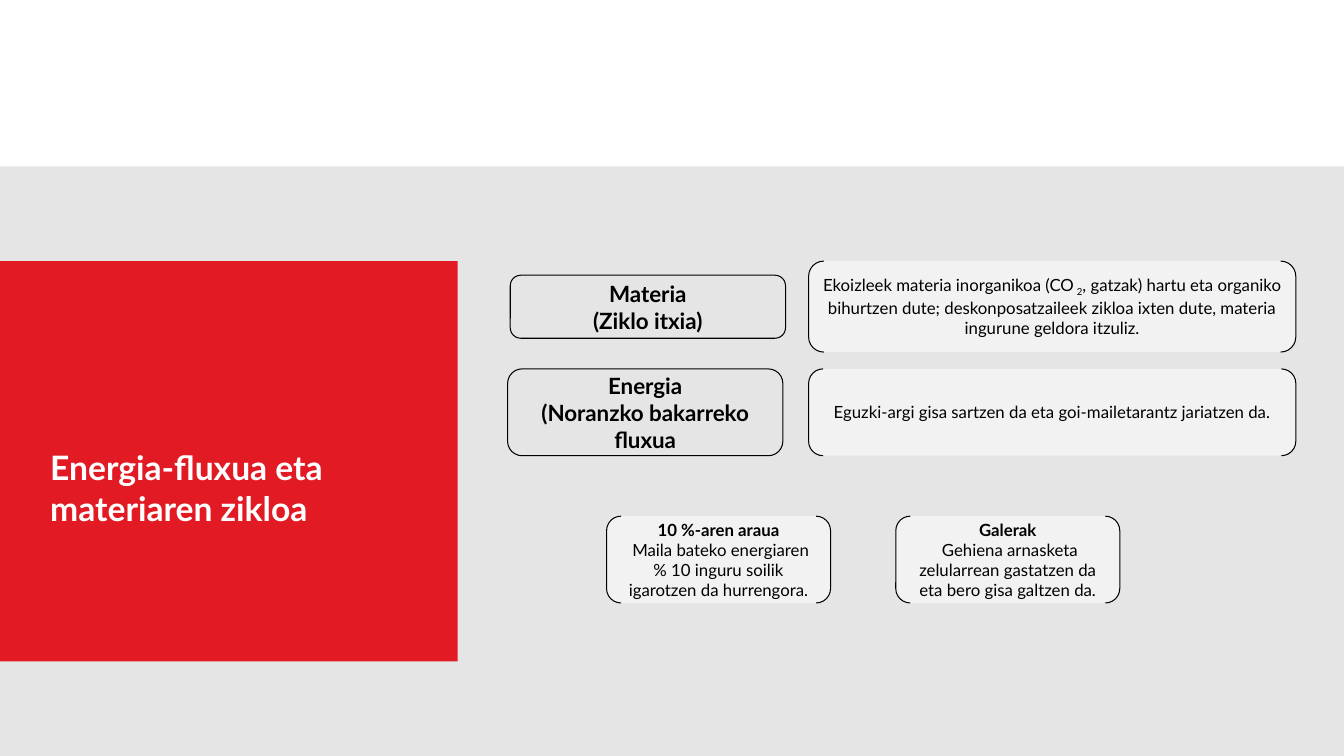
from lxml.etree import SubElement
from pptx import Presentation
from pptx.dml.color import RGBColor
from pptx.enum.shapes import MSO_SHAPE
from pptx.enum.text import MSO_ANCHOR, PP_ALIGN
from pptx.oxml.ns import qn
from pptx.util import Pt

BLACK = RGBColor(0, 0, 0)
WHITE = RGBColor(255, 255, 255)
GREY = RGBColor(0xE5, 0xE5, 0xE5)
RED = RGBColor(0xE2, 0x1A, 0x23)


class Page:
    """Holds the font and the slide, and draws each kind of element."""

    def __init__(self, slide, face="Lato"):
        self.slide = slide
        self.face = face

    def shape(self, kind, box, fill=None, line=None):
        item = self.slide.shapes.add_shape(kind, *map(Pt, box))
        item.shadow.inherit = False
        if fill is None:
            item.fill.background()
        else:
            item.fill.solid()
            item.fill.fore_color.rgb = fill
        if line is None:
            item.line.fill.background()
        else:
            item.line.color.rgb = line
            item.line.width = Pt(0.75)
        return item

    def band(self, box, fill):
        self.shape(MSO_SHAPE.RECTANGLE, box, fill)

    def text(self, frame, rows, size, color=BLACK, align=PP_ALIGN.CENTER):
        frame.word_wrap = True
        for num, (parts, bold) in enumerate(rows):
            para = frame.add_paragraph() if num else frame.paragraphs[0]
            para.alignment = align
            font = para.font
            font.name, font.size, font.bold = self.face, Pt(size), bold
            font.color.rgb = color
            for spot, part in enumerate(parts.split("|")):
                run = para.add_run()
                run.text = part
                if spot % 2:
                    run.font._element.set("baseline", "-25000")

    def title(self, box, words):
        frame = self.slide.shapes.add_textbox(*map(Pt, box)).text_frame
        self.text(frame, [(words, True)], 24, WHITE, PP_ALIGN.LEFT)

    def label(self, box, *lines):
        item = self.shape(MSO_SHAPE.ROUNDED_RECTANGLE, box, line=BLACK)
        item.text_frame.vertical_anchor = MSO_ANCHOR.MIDDLE
        self.text(item.text_frame, [(line, True) for line in lines], 16)

    def note(self, box, body, head=None):
        item = self.shape(MSO_SHAPE.DOUBLE_BRACKET, box, WHITE, BLACK)
        tint = item.fill._xPr.find(qn("a:solidFill"))[0]
        SubElement(tint, qn("a:alpha")).set("val", "50000")
        item.text_frame.vertical_anchor = MSO_ANCHOR.MIDDLE
        rows = [(head, True)] if head else []
        self.text(item.text_frame, rows + [(body, False)], 12)


def main():
    deck = Presentation()
    deck.slide_width, deck.slide_height = Pt(960), Pt(540)
    page = Page(deck.slides.add_slide(deck.slide_layouts[6]))

    page.band((0, 118.8, 960, 421.2), GREY)
    page.band((0, 186.5, 327, 286), RED)
    page.title((28.8, 316, 253.5, 65.5), "Energia-fluxua eta materiaren zikloa")

    page.label((364.5, 196.6, 196.6, 45), "Materia", "(Ziklo itxia)")
    page.label((362.6, 263.5, 196.6, 62), "Energia", "(Noranzko bakarreko fluxua")

    page.note((577.6, 186.5, 348, 65),
              "Ekoizleek materia inorganikoa (CO| 2|, gatzak) hartu eta organiko "
              "bihurtzen dute; deskonposatzaileek zikloa ixten dute, materia "
              "ingurune geldora itzuliz.")
    page.note((577.6, 263.5, 348, 62),
              "Eguzki-argi gisa sartzen da eta goi-mailetarantz jariatzen da.")

    facts = [
        ("10 %-aren araua",
         " Maila bateko energiaren % 10 inguru soilik igarotzen da hurrengora."),
        ("Galerak",
         " Gehiena arnasketa zelularrean gastatzen da eta bero gisa galtzen da."),
    ]
    for num, (head, body) in enumerate(facts):
        page.note((433.3 + 206.6 * num, 368.7, 160, 62), body, head)

    deck.save("out.pptx")


if __name__ == "__main__":
    main()
